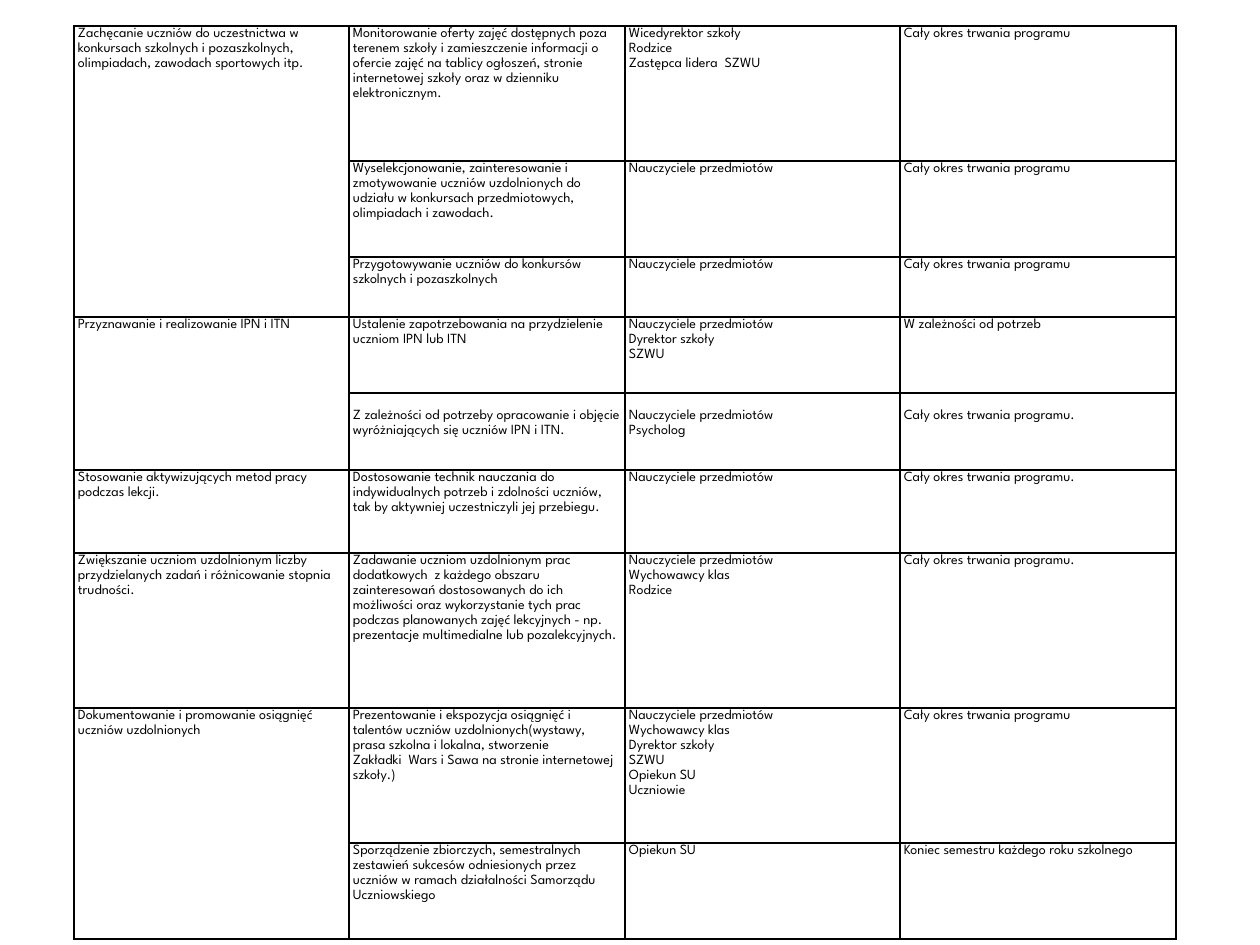
from lxml import etree
from pptx import Presentation
from pptx import util as u
from pptx.dml.color import RGBColor
from pptx.oxml.ns import qn

PX = 914400 // 126
COLORS = {"ink": "000000", "border": "000000"}
FONT = "League Spartan"
LEFT, TOP = 74, 26
COLUMN_WIDTHS = [275, 276, 275, 276]
ROW_HEIGHTS = [135, 96, 60, 76, 77, 83, 155, 135, 96]
LINE_HEIGHT = 15
LOWERED_ROW = 4  # its text starts one line down

TEACHERS = "Nauczyciele przedmiotów"
WHOLE_PERIOD = "Cały okres trwania programu"

# An empty first cell continues the goal above it.
ROWS = [
    ("Zachęcanie uczniów do uczestnictwa w konkursach szkolnych i pozaszkolnych, "
     "olimpiadach, zawodach sportowych itp.",
     "Monitorowanie oferty zajęć dostępnych poza terenem szkoły i zamieszczenie "
     "informacji o ofercie zajęć na tablicy ogłoszeń, stronie internetowej szkoły "
     "oraz w dzienniku elektronicznym.",
     "Wicedyrektor szkoły\nRodzice\nZastępca lidera  SZWU", WHOLE_PERIOD),
    ("",
     "Wyselekcjonowanie, zainteresowanie i zmotywowanie uczniów uzdolnionych do "
     "udziału w konkursach przedmiotowych, olimpiadach i zawodach.",
     TEACHERS, WHOLE_PERIOD),
    ("", "Przygotowywanie uczniów do konkursów szkolnych i pozaszkolnych",
     TEACHERS, WHOLE_PERIOD),
    ("Przyznawanie i realizowanie IPN i ITN",
     "Ustalenie zapotrzebowania na przydzielenie uczniom IPN lub ITN",
     TEACHERS + "\nDyrektor szkoły\nSZWU", "W zależności od potrzeb"),
    ("",
     "Z zależności od potrzeby opracowanie i objęcie wyróżniających się uczniów IPN i ITN.",
     TEACHERS + "\nPsycholog", WHOLE_PERIOD + "."),
    ("Stosowanie aktywizujących metod pracy podczas lekcji.",
     "Dostosowanie technik nauczania do indywidualnych potrzeb i zdolności uczniów, "
     "tak by aktywniej uczestniczyli jej przebiegu.",
     TEACHERS, WHOLE_PERIOD + "."),
    ("Zwiększanie uczniom uzdolnionym liczby przydzielanych zadań i różnicowanie "
     "stopnia trudności.",
     "Zadawanie uczniom uzdolnionym prac dodatkowych  z każdego obszaru zainteresowań "
     "dostosowanych do ich możliwości oraz wykorzystanie tych prac podczas planowanych "
     "zajęć lekcyjnych - np. prezentacje multimedialne lub pozalekcyjnych.",
     TEACHERS + "\nWychowawcy klas\nRodzice", WHOLE_PERIOD + "."),
    ("Dokumentowanie i promowanie osiągnięć uczniów uzdolnionych",
     "Prezentowanie i ekspozycja osiągnięć i talentów uczniów uzdolnionych(wystawy, "
     "prasa szkolna i lokalna, stworzenie\n"
     "Zakładki  Wars i Sawa na stronie internetowej szkoły.)",
     TEACHERS + "\nWychowawcy klas\nDyrektor szkoły\nSZWU\nOpiekun SU\nUczniowie",
     WHOLE_PERIOD),
    ("",
     "Sporządzenie zbiorczych, semestralnych zestawień sukcesów odniesionych przez "
     "uczniów w ramach działalności Samorządu Uczniowskiego",
     "Opiekun SU", "Koniec semestru każdego roku szkolnego"),
]


def add_borders(cell):
    properties = cell._tc.get_or_add_tcPr()
    for position, side in enumerate(("lnL", "lnR", "lnT", "lnB")):
        line = etree.Element(qn("a:" + side), w=str(u.Pt(1)))
        fill = etree.SubElement(line, qn("a:solidFill"))
        etree.SubElement(fill, qn("a:srgbClr"), val=COLORS["border"])
        properties.insert(position, line)


deck = Presentation()
deck.slide_width, deck.slide_height = u.Inches(10), u.Inches(7.5)
page = deck.slides.add_slide(deck.slide_layouts[6])

frame = page.shapes.add_table(
    len(ROWS), len(COLUMN_WIDTHS), LEFT * PX, TOP * PX,
    sum(COLUMN_WIDTHS) * PX, sum(ROW_HEIGHTS) * PX)
table = frame.table
table.first_row = table.horz_banding = False
for column, width in zip(table.columns, COLUMN_WIDTHS):
    column.width = width * PX
for row, height in zip(table.rows, ROW_HEIGHTS):
    row.height = height * PX

for row_index, row in enumerate(ROWS):
    for column_index, content in enumerate(row):
        cell = table.cell(row_index, column_index)
        cell.margin_left = cell.margin_right = 4 * PX
        cell.margin_top = LINE_HEIGHT * PX if row_index == LOWERED_ROW else 0
        cell.margin_bottom = 0
        cell.fill.background()
        add_borders(cell)
        cell.text_frame.text = content
        for para in cell.text_frame.paragraphs:
            para.line_spacing = 1.15
            for span in para.runs:
                span.font.name = FONT
                span.font.size = u.Pt(8)
                span.font.color.rgb = RGBColor.from_string(COLORS["ink"])

goal_starts = [index for index, row in enumerate(ROWS) if row[0]]
for start, end in zip(goal_starts, goal_starts[1:] + [len(ROWS)]):
    if end - start > 1:
        table.cell(start, 0).merge(table.cell(end - 1, 0))

deck.save("out.pptx")
